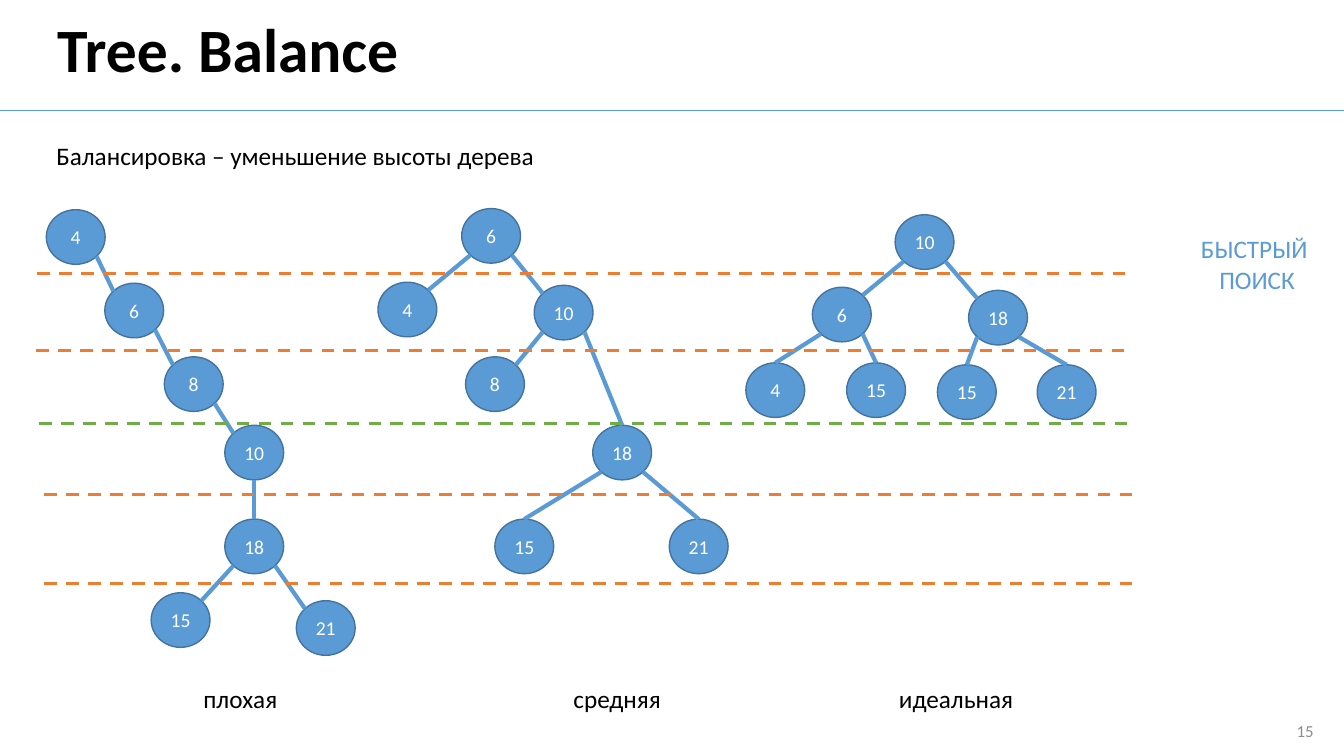
from math import cos, radians, sin

from lxml import etree
from pptx import Presentation
from pptx.dml.color import RGBColor
from pptx.enum.dml import MSO_LINE
from pptx.enum.shapes import MSO_CONNECTOR, MSO_SHAPE
from pptx.enum.text import MSO_ANCHOR, PP_ALIGN
from pptx.oxml.ns import qn
from pptx.util import Pt

LEFT, MID, RIGHT, JUST = PP_ALIGN.LEFT, PP_ALIGN.CENTER, PP_ALIGN.RIGHT, PP_ALIGN.JUSTIFY
TOP, CENTER = MSO_ANCHOR.TOP, MSO_ANCHOR.MIDDLE
OVAL, LINE, DASH = MSO_SHAPE.OVAL, MSO_CONNECTOR.STRAIGHT, MSO_LINE.DASH

BLUE, EDGE, ORANGE, GREEN = "5B9BD5", "43739E", "ED7D31", "70AD47"
BLACK, WHITE, GRAY = "000000", "FFFFFF", "8C8C8C"

NODE_W, NODE_H = 42, 39
DASH_W = 782.6
N, NE, SE, S, SW, NW = 270, 315, 45, 90, 135, 225

BAD = (
    [("4", 33.1, 149.8), ("6", 74.9, 202.3), ("8", 117.4, 254.9),
     ("10", 160.6, 303.8), ("18", 160.6, 370.8),
     ("15", 108, 423.4), ("21", 211.7, 429.1)],
    [(0, SE, 1, NW), (1, SE, 2, NW), (2, SE, 3, NW),
     (3, S, 4, N), (4, SW, 5, NE), (4, SE, 6, NW)],
)
FAIR = (
    [("6", 329.8, 149), ("4", 270, 201.6), ("10", 381.6, 203.8),
     ("8", 332.6, 254.9), ("18", 423.4, 303.8),
     ("15", 353.5, 370.8), ("21", 478.1, 370.8)],
    [(0, SW, 1, NE), (0, SE, 2, NW), (2, SW, 3, NE),
     (2, SE, 4, N), (4, SW, 5, N), (4, SE, 6, N)],
)
IDEAL = (
    [("10", 639.4, 153.4), ("6", 580.3, 205.2), ("18", 691.9, 207.4),
     ("4", 532.8, 259.2), ("15", 604.8, 259.2),
     ("15", 669.6, 260.6), ("21", 740.9, 260.6)],
    [(0, SW, 1, NE), (0, SE, 2, NW), (1, SW, 3, N),
     (1, SE, 4, N), (2, SW, 5, N), (2, SE, 6, N)],
)
LEVELS = [
    (26.6, 195.1, ORANGE), (25.9, 250.6, ORANGE), (28.1, 302.4, GREEN),
    (31.7, 353.5, ORANGE), (31.7, 416.9, ORANGE),
]
NAMES = [("плохая", 138.2, 67.7), ("средняя", 402.5, 77.8), ("идеальная", 635, 97.2)]


def color(code):
    return RGBColor.from_string(code)


class Board:
    font = "Calibri"

    def __init__(self, slide):
        self.shapes = slide.shapes

    def style(self, frame, text, size, ink, align, anchor, bold=False, space=1):
        frame.text = text
        frame.vertical_anchor = anchor
        for para in frame.paragraphs:
            para.alignment = align
            para.line_spacing = space
            for run in para.runs:
                run.font.name = self.font
                run.font.size = Pt(size)
                run.font.bold = bold
                run.font.color.rgb = color(ink)

    def text(self, words, x, y, w, h, size=18, ink=BLACK, align=LEFT,
             anchor=TOP, wrap=True, **more):
        box = self.shapes.add_textbox(Pt(x), Pt(y), Pt(w), Pt(h))
        box.text_frame.word_wrap = wrap
        self.style(box.text_frame, words, size, ink, align, anchor, **more)

    def line(self, start, end, ink, width, dash=None):
        line = self.shapes.add_connector(LINE, *map(Pt, start + end))
        line.line.color.rgb = color(ink)
        line.line.width = Pt(width)
        if dash:
            line.line.dash_style = dash
        etree.SubElement(line._element.spPr, qn("a:effectLst"))

    def node(self, label, x, y):
        oval = self.shapes.add_shape(OVAL, Pt(x), Pt(y), Pt(NODE_W), Pt(NODE_H))
        oval.shadow.inherit = False
        oval.fill.solid()
        oval.fill.fore_color.rgb = color(BLUE)
        oval.line.color.rgb = color(EDGE)
        oval.line.width = Pt(1)
        self.style(oval.text_frame, label, 14, WHITE, MID, CENTER)

    def tree(self, nodes, links):
        def rim(index, angle):
            x, y = nodes[index][1:]
            turn = radians(angle)
            return (x + NODE_W / 2 * (1 + cos(turn)),
                    y + NODE_H / 2 * (1 + sin(turn)))

        for node in nodes:
            self.node(*node)
        for top, out, child, into in links:
            self.line(rim(top, out), rim(child, into), BLUE, 3)


def main():
    deck = Presentation()
    deck.slide_width, deck.slide_height = Pt(960), Pt(540)
    board = Board(deck.slides.add_slide(deck.slide_layouts[6]))

    board.line((0, 78.7), (960, 78.7), BLUE, 0.5)
    board.text("Tree. Balance", 33.8, 2.9, 649.4, 69.1, size=44,
               anchor=CENTER, bold=True, space=0.9)
    board.text("15", 729.4, 507.6, 216, 28.8, size=12, ink=GRAY,
               align=RIGHT, anchor=CENTER)
    board.text("Балансировка – уменьшение высоты дерева", 33.1, 85.7, 409.7, 40.3,
               align=JUST, space=1.5)
    board.text("БЫСТРЫЙ \vПОИСК", 841, 163.4, 113.8, 51.1, ink=BLUE, align=MID)

    for tree in (BAD, FAIR, IDEAL):
        board.tree(*tree)
    for x, y, ink in LEVELS:
        board.line((x, y), (x + DASH_W, y), ink, 2.25, DASH)
    for name, x, w in NAMES:
        board.text(name, x, 484.6, w, 28.8, wrap=False)

    deck.save("out.pptx")


if __name__ == "__main__":
    main()
